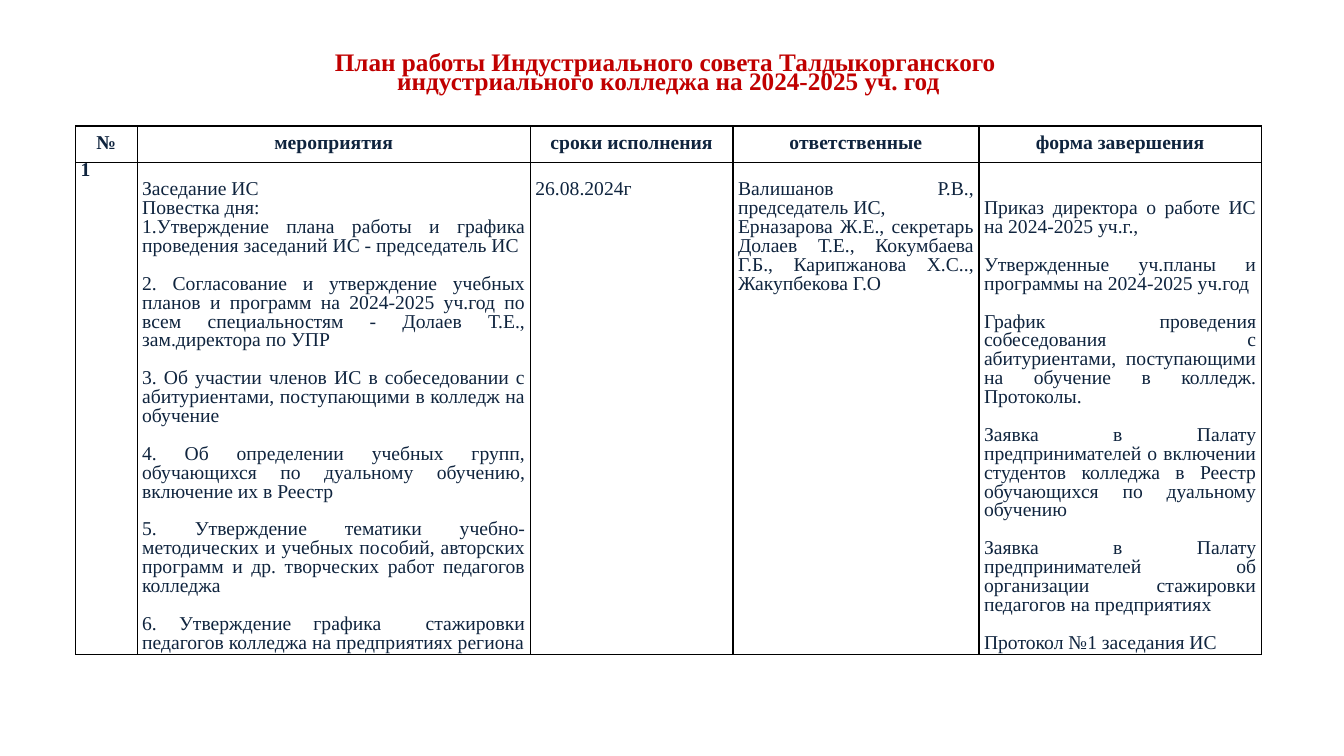
"""Build the work plan slide of the industrial council."""
from dataclasses import dataclass
from typing import Any

from lxml import etree
from pptx import Presentation
from pptx.dml.color import RGBColor
from pptx.enum.text import MSO_ANCHOR, MSO_AUTO_SIZE, PP_ALIGN
from pptx.oxml.ns import qn
from pptx.util import Inches, Pt

MID, JUST = PP_ALIGN.CENTER, PP_ALIGN.JUSTIFY
TOP, HALF = MSO_ANCHOR.TOP, MSO_ANCHOR.MIDDLE
FIXED = MSO_AUTO_SIZE.NONE


@dataclass(frozen=True)
class Theme:
    font: str = "Times New Roman"
    red: str = "C00000"
    navy: str = "0F243E"
    black: str = "000000"
    white: str = "FFFFFF"
    head: float = 18
    body: float = 14
    line: float = 13.5
    rule: float = 1


@dataclass(frozen=True)
class Entry:
    blocks: tuple[tuple[str, ...], ...]
    skip: int = 0
    bold: bool = False
    align: Any = JUST
    anchor: Any = TOP


THEME = Theme()
TITLE = (
    "План работы Индустриального совета Талдыкорганского ",
    "индустриального колледжа на 2024-2025 уч. год",
)
HEADS = ("№", "мероприятия", "сроки исполнения", "ответственные", "форма завершения")
TASKS = (
    (
        "Заседание ИС",
        "Повестка дня:",
        "1.Утверждение плана работы и графика проведения заседаний ИС - председатель ИС",
    ),
    ("2. Согласование и утверждение учебных планов и программ на 2024-2025 уч.год "
     "по всем специальностям - Долаев Т.Е., зам.директора по УПР",),
    ("3. Об участии членов ИС в собеседовании с абитуриентами, "
     "поступающими в колледж на обучение",),
    ("4. Об определении учебных групп, обучающихся по дуальному обучению, "
     "включение их в Реестр",),
    ("5. Утверждение тематики учебно-методических и учебных пособий, "
     "авторских программ и др. творческих работ педагогов колледжа",),
    ("6. Утверждение графика  стажировки педагогов колледжа на предприятиях региона",),
)
STAFF = (
    "Валишанов Р.В., председатель ИС, ",
    "Ерназарова Ж.Е., секретарь Долаев Т.Е., Кокумбаева Г.Б., "
    "Карипжанова Х.С.., Жакупбекова Г.О",
)
FORMS = (
    ("Приказ директора о работе ИС на 2024-2025 уч.г.,",),
    ("Утвержденные уч.планы и программы на 2024-2025 уч.год",),
    ("График проведения собеседования с абитуриентами, "
     "поступающими на обучение в колледж. Протоколы.",),
    ("Заявка в Палату предпринимателей о включении студентов колледжа "
     "в Реестр обучающихся по дуальному обучению",),
    ("Заявка в Палату предпринимателей об организации стажировки "
     "педагогов на предприятиях",),
    ("Протокол №1 заседания ИС",),
)
ROWS = (
    tuple(Entry(((head,),), bold=True, align=MID, anchor=HALF) for head in HEADS),
    (
        Entry((("1",),), bold=True),
        Entry(TASKS, skip=1),
        Entry((("26.08.2024г",),), skip=1),
        Entry((STAFF,), skip=1),
        Entry(FORMS, skip=2),
    ),
)
WIDTHS = (0.61, 3.9, 2.01, 2.44, 2.8)
HEIGHTS = (0.36, 4.88)


def apply(item: Any, values: dict[str, Any]) -> None:
    """Set each named value on the item."""
    for name, value in values.items():
        setattr(item, name, value)


def write(frame: Any, blocks: tuple[tuple[str, ...], ...], align: Any,
          size: float, color: str, bold: bool) -> None:
    """Write blocks of paragraphs with one line of space between blocks."""
    lines = [(text, bool(i) and not j)
             for i, block in enumerate(blocks) for j, text in enumerate(block)]
    for i, (text, gap) in enumerate(lines):
        para = frame.add_paragraph() if i else frame.paragraphs[0]
        apply(para, {"alignment": align, "line_spacing": Pt(THEME.line),
                     "space_before": Pt(THEME.line if gap else 0), "space_after": Pt(0)})
        run = para.add_run()
        run.text = text
        apply(run.font, {"name": THEME.font, "size": Pt(size), "bold": bold})
        run.font.color.rgb = RGBColor.from_string(color)


def edge(cell: Any) -> None:
    """Draw a thin rule on all four sides of a cell."""
    props = cell._tc.get_or_add_tcPr()
    for i, tag in enumerate(("a:lnL", "a:lnR", "a:lnT", "a:lnB")):
        line = etree.Element(qn(tag), w=str(Pt(THEME.rule)))
        fill = etree.SubElement(line, qn("a:solidFill"))
        etree.SubElement(fill, qn("a:srgbClr"), val=THEME.black)
        props.insert(i, line)


def fill_cell(cell: Any, entry: Entry) -> None:
    """Format one table cell and write its entry."""
    apply(cell, {"margin_left": Inches(0.05), "margin_right": Inches(0.05),
                 "margin_top": Pt(THEME.line * entry.skip), "margin_bottom": 0,
                 "vertical_anchor": entry.anchor})
    cell.fill.solid()
    cell.fill.fore_color.rgb = RGBColor.from_string(THEME.white)
    edge(cell)
    write(cell.text_frame, entry.blocks, entry.align, THEME.body, THEME.navy, entry.bold)


def add_title(slide: Any) -> None:
    """Place and format the slide title."""
    title = slide.shapes.title
    apply(title, {"left": Inches(0.42), "top": Inches(0.33),
                  "width": Inches(12.42), "height": Inches(0.69)})
    apply(title.text_frame, {"word_wrap": True, "auto_size": FIXED, "vertical_anchor": TOP,
                             "margin_left": Inches(0.1), "margin_right": Inches(0.1),
                             "margin_top": Inches(0.24), "margin_bottom": Inches(0.05)})
    write(title.text_frame, (TITLE,), MID, THEME.head, THEME.red, True)


def add_plan(slide: Any) -> None:
    """Add the plan table."""
    table = slide.shapes.add_table(
        len(ROWS), len(WIDTHS), Inches(0.75), Inches(1.25),
        Inches(sum(WIDTHS)), Inches(sum(HEIGHTS))).table
    for col, width in zip(table.columns, WIDTHS):
        col.width = Inches(width)
    for row, height, items in zip(table.rows, HEIGHTS, ROWS):
        row.height = Inches(height)
        for cell, entry in zip(row.cells, items):
            fill_cell(cell, entry)


def main() -> None:
    """Build and save the deck."""
    deck = Presentation()
    apply(deck, {"slide_width": Inches(13.33), "slide_height": Inches(7.5)})
    slide = deck.slides.add_slide(deck.slide_layouts[5])
    add_title(slide)
    add_plan(slide)
    deck.save("out.pptx")


if __name__ == "__main__":
    main()
